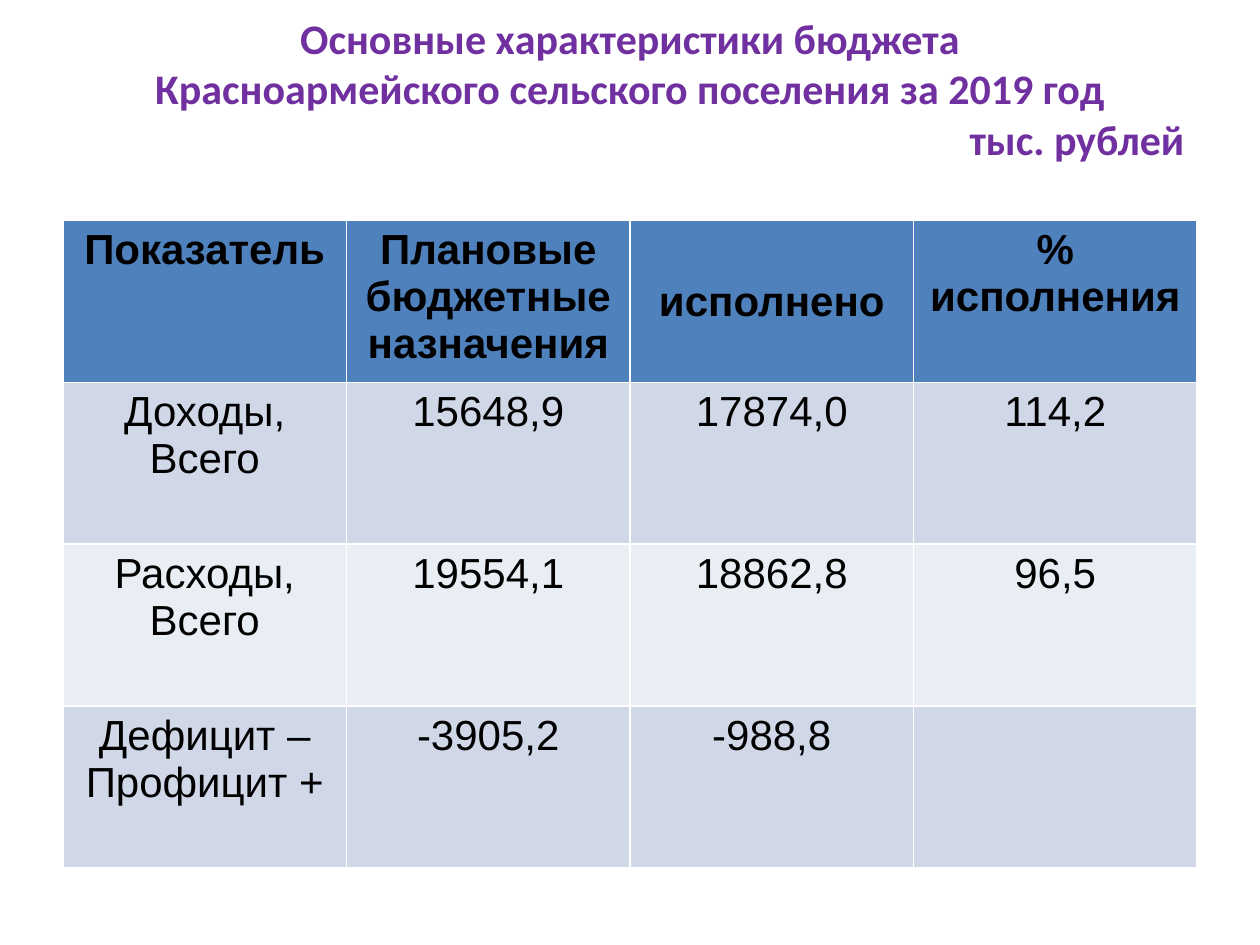
from pptx import Presentation
from pptx.dml.color import RGBColor
from pptx.enum.text import MSO_ANCHOR, MSO_AUTO_SIZE, PP_ALIGN
from pptx.util import Inches, Pt

CENTER, RIGHT = PP_ALIGN.CENTER, PP_ALIGN.RIGHT
TITLE_ONLY = 5

TITLE = [
    ("Основные характеристики бюджета", CENTER),
    ("Красноармейского сельского поселения за 2019 год", CENTER),
    ("тыс. рублей", RIGHT),
]
ROWS = [
    ["Показатель", "Плановые бюджетные назначения", "исполнено", "%\nисполнения"],
    ["Доходы,\nВсего", "15648,9", "17874,0", "114,2"],
    ["Расходы,\nВсего", "19554,1", "18862,8", "96,5"],
    ["Дефицит –\nПрофицит +", "-3905,2", "-988,8", ""],
]
ROW_FILLS = ["4F81BD", "D0D8E8", "E9EDF4", "D0D8E8"]
LEFT, WIDTH = Inches(0.5), Inches(9)
TABLE_TOP, ROW_HEIGHT = Inches(1.75), Inches(1.285)
LOWERED_HEADER_MARGIN = Inches(0.46)


def color(value):
    return RGBColor.from_string(value)


def format_paragraph(paragraph, alignment, font_name, font_color, bold):
    paragraph.alignment = alignment
    font = paragraph.font
    font.name, font.size, font.bold = font_name, Pt(24), bold
    font.color.rgb = color(font_color)


def add_title(slide):
    title = slide.shapes.title
    title.left, title.top = LEFT, Inches(0.3)
    title.width, title.height = WIDTH, Inches(1.18)
    frame = title.text_frame
    frame.auto_size = MSO_AUTO_SIZE.NONE
    frame.vertical_anchor = MSO_ANCHOR.BOTTOM
    frame.margin_bottom = Inches(0.18)
    frame.text = "\n".join(text for text, _ in TITLE)
    for paragraph, (_, alignment) in zip(frame.paragraphs, TITLE):
        format_paragraph(paragraph, alignment, "Calibri", "7030A0", True)


def add_budget_table(slide):
    table = slide.shapes.add_table(
        len(ROWS), len(ROWS[0]), LEFT, TABLE_TOP, WIDTH, ROW_HEIGHT * len(ROWS)
    ).table
    for row_index, (texts, fill) in enumerate(zip(ROWS, ROW_FILLS)):
        for column_index, text in enumerate(texts):
            cell = table.cell(row_index, column_index)
            cell.fill.solid()
            cell.fill.fore_color.rgb = color(fill)
            cell.text = text
            for paragraph in cell.text_frame.paragraphs:
                format_paragraph(paragraph, CENTER, "Arial", "000000", row_index == 0)
    table.cell(0, 2).margin_top = LOWERED_HEADER_MARGIN


def main():
    presentation = Presentation()
    presentation.slide_width, presentation.slide_height = Inches(10), Inches(7.5)
    slide = presentation.slides.add_slide(presentation.slide_layouts[TITLE_ONLY])
    add_title(slide)
    add_budget_table(slide)
    presentation.save("out.pptx")


if __name__ == "__main__":
    main()
